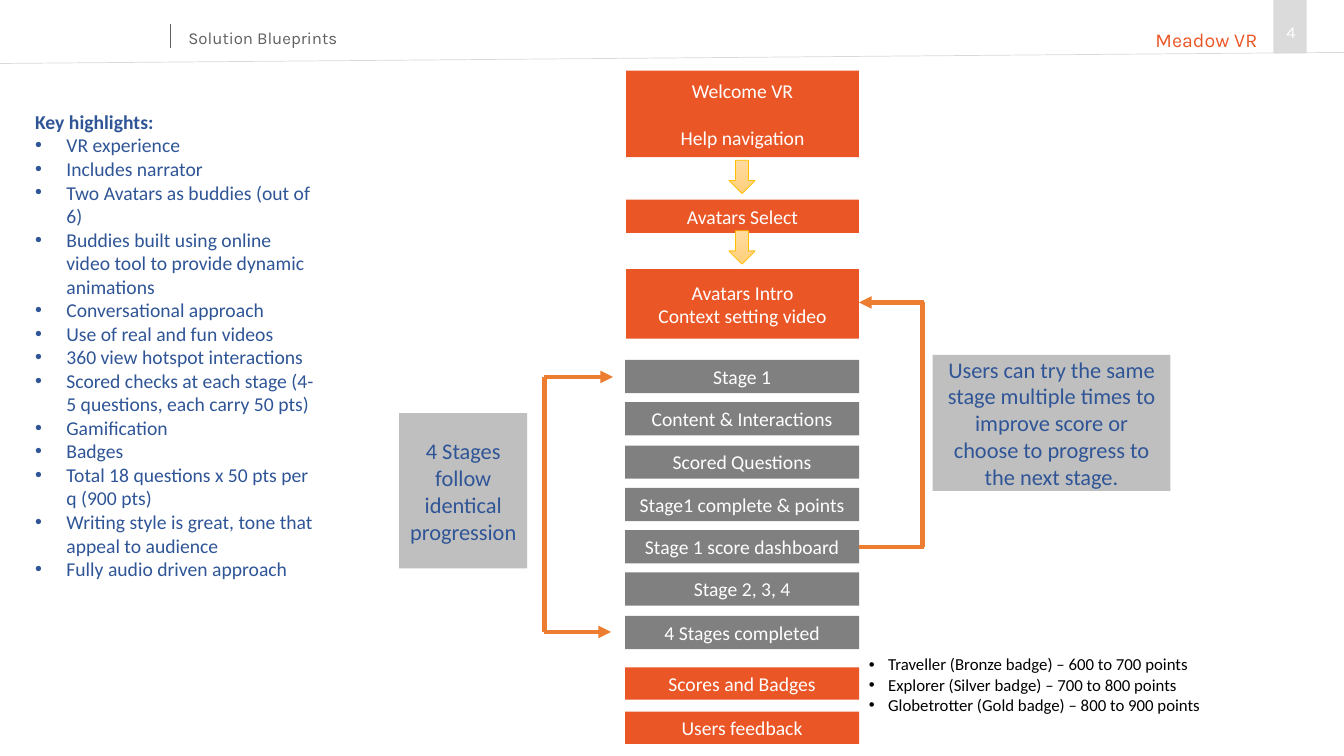
from typing import NamedTuple, Optional

from lxml.etree import SubElement
from pptx import Presentation
from pptx.dml.color import RGBColor
from pptx.enum.shapes import MSO_CONNECTOR as Connector, MSO_SHAPE as Shape
from pptx.enum.text import MSO_ANCHOR as Anchor, PP_ALIGN as Align
from pptx.oxml.ns import qn
from pptx.util import Pt

PX = 9144  # EMU in one px, 100 px to the inch

ORANGE = RGBColor(0xEB, 0x56, 0x26)
LOOP_ORANGE = RGBColor(0xED, 0x7D, 0x31)
STAGE_GREY = RGBColor(0x80, 0x80, 0x80)
NOTE_GREY = RGBColor(0xBF, 0xBF, 0xBF)
TAB_GREY = RGBColor(0xDB, 0xDB, 0xDB)
RULE_GREY = RGBColor(0xD9, 0xD9, 0xD9)
TITLE_GREY = RGBColor(0x60, 0x60, 0x60)
BLUE = RGBColor(0x2F, 0x55, 0x97)
GOLD = RGBColor(0xFF, 0xC0, 0x00)
ARROW_TOP = RGBColor(0xFF, 0xDB, 0x9E)
ARROW_FOOT = RGBColor(0xFF, 0xD0, 0x7C)
WHITE = RGBColor(0xFF, 0xFF, 0xFF)
BLACK = RGBColor(0, 0, 0)


class Area(NamedTuple):
    left: int
    top: int
    width: int
    height: int


class Style(NamedTuple):
    size: int
    color: RGBColor
    font: str = "Calibri"
    align: Align = Align.LEFT


class Box(NamedTuple):
    area: Area
    fill: RGBColor
    style: Style
    lines: tuple[str, ...] = ()
    gap: int = 0


class Line(NamedTuple):
    x1: int
    y1: int
    x2: int
    y2: int
    arrow: bool = False
    color: RGBColor = LOOP_ORANGE
    width: float = 3


STEP = Style(14, WHITE, align=Align.CENTER)
NOTE = Style(16, BLUE, align=Align.CENTER)

# Flow of steps, from the welcome screen to the feedback
STAGES = ("Stage 1", "Content & Interactions", "Scored Questions",
          "Stage1 complete & points", "Stage 1 score dashboard",
          "Stage 2, 3, 4", "4 Stages completed")
STAGE_TOP, STAGE_PITCH = 357, 42.3

BOXES = [
    Box(Area(1263, 0, 33, 53), TAB_GREY, STEP),
    Box(Area(621, 70, 231, 86), ORANGE, STEP, ("Welcome VR", "Help navigation"), 17),
    Box(Area(621, 198, 231, 33), ORANGE, STEP, ("Avatars Select",)),
    Box(Area(621, 267, 231, 69), ORANGE, STEP, ("Avatars Intro", "Context setting video")),
    *(Box(Area(620, round(STAGE_TOP + i * STAGE_PITCH), 232, 33), STAGE_GREY, STEP, (stage,))
      for i, stage in enumerate(STAGES)),
    Box(Area(620, 662, 232, 32), ORANGE, STEP, ("Scores and Badges",)),
    Box(Area(620, 706, 232, 32), ORANGE, STEP, ("Users feedback",)),
    Box(Area(396, 410, 127, 154), NOTE_GREY, NOTE,
        ("4 Stages follow identical progression",)),
    Box(Area(925, 352, 236, 135), NOTE_GREY, NOTE,
        ("Users can try the same stage multiple times to improve score "
         "or choose to progress to the next stage.",)),
]

LINES = [
    # Header rules
    Line(1333, 52, 0, 63, color=RULE_GREY, width=0.5),
    Line(169, 24, 169, 48, color=TITLE_GREY, width=0.5),
    # Retry loop from the dashboard to the intro
    Line(915, 300, 915, 543),
    Line(916, 300, 852, 300, arrow=True),
    Line(916, 543, 852, 543),
    # Bracket around the stages
    Line(540, 374, 540, 627),
    Line(540, 374, 608, 374, arrow=True),
    Line(540, 627, 606, 627, arrow=True),
]

HIGHLIGHTS = (
    "VR experience",
    "Includes narrator",
    "Two Avatars as buddies (out of 6)",
    "Buddies built using online video tool to provide dynamic animations",
    "Conversational approach",
    "Use of real and fun videos",
    "360 view hotspot interactions",
    "Scored checks at each stage (4-5 questions, each carry 50 pts)",
    "Gamification",
    "Badges",
    "Total 18 questions x 50 pts per q (900 pts)",
    "Writing style is great, tone that appeal to audience",
    "Fully audio driven approach",
)
BADGES = (
    "Traveller (Bronze badge) – 600 to 700 points",
    "Explorer (Silver badge) – 700 to 800 points",
    "Globetrotter (Gold badge) – 800 to 900 points",
)


def emu(area: Area) -> list[int]:
    return [length * PX for length in area]


def write(frame, lines: tuple[str, ...], style: Style, gap: int = 0,
          hang: int = 0, heading: Optional[str] = None) -> None:
    """Fill a text frame; hang is the bullet indent in px, 0 for no bullets."""
    frame.word_wrap = True
    texts = lines if heading is None else (heading, *lines)
    for i, text in enumerate(texts):
        is_heading = heading is not None and i == 0
        paragraph = frame.paragraphs[0] if i == 0 else frame.add_paragraph()
        paragraph.text = text
        paragraph.alignment = style.align
        if gap and i:
            paragraph.space_before = Pt(gap)
        if hang and not is_heading:
            props = paragraph._p.get_or_add_pPr()
            props.set("marL", str(hang * PX))
            props.set("indent", str(-hang * PX))
            SubElement(props, qn("a:buFont")).set("typeface", "Arial")
            SubElement(props, qn("a:buChar")).set("char", "•")
        font = paragraph.font
        font.name, font.size, font.bold = style.font, Pt(style.size), is_heading
        font.color.rgb = style.color


def add_box(shapes, box: Box) -> None:
    rect = shapes.add_shape(Shape.RECTANGLE, *emu(box.area))
    rect.shadow.inherit = False
    rect.fill.solid()
    rect.fill.fore_color.rgb = box.fill
    rect.line.fill.background()
    if box.lines:
        rect.text_frame.vertical_anchor = Anchor.MIDDLE
        write(rect.text_frame, box.lines, box.style, box.gap)


def add_line(shapes, line: Line) -> None:
    ends = (length * PX for length in (line.x1, line.y1, line.x2, line.y2))
    connector = shapes.add_connector(Connector.STRAIGHT, *ends)
    connector.line.color.rgb = line.color
    connector.line.width = Pt(line.width)
    props = connector._element.spPr
    if line.arrow:
        SubElement(props.find(qn("a:ln")), qn("a:tailEnd")).set("type", "triangle")
    SubElement(props, qn("a:effectLst"))


def add_down_arrow(shapes, area: Area) -> None:
    arrow = shapes.add_shape(Shape.DOWN_ARROW, *emu(area))
    arrow.shadow.inherit = False
    arrow.fill.gradient()
    arrow.fill.gradient_angle = 270
    for stop, color in zip(arrow.fill.gradient_stops, (ARROW_TOP, ARROW_FOOT)):
        stop.color.rgb = color
    arrow.line.color.rgb = GOLD
    arrow.line.width = Pt(0.5)


def add_text(shapes, area: Area, lines: tuple[str, ...], style: Style,
             anchor: Anchor = Anchor.TOP, hang: int = 0,
             heading: Optional[str] = None) -> None:
    frame = shapes.add_textbox(*emu(area)).text_frame
    frame.vertical_anchor = anchor
    write(frame, lines, style, hang=hang, heading=heading)


def main() -> None:
    deck = Presentation()
    deck.slide_width, deck.slide_height = 1333 * PX, 750 * PX
    shapes = deck.slides.add_slide(deck.slide_layouts[6]).shapes

    # Flow, notes and connecting lines
    for box in BOXES:
        add_box(shapes, box)
    for top in (159, 229):
        add_down_arrow(shapes, Area(723, top, 26, 33))
    for line in LINES:
        add_line(shapes, line)

    # Header texts
    add_text(shapes, Area(177, 23, 373, 30), ("Solution Blueprints",),
             Style(12, TITLE_GREY, "Karla"))
    add_text(shapes, Area(884, 23, 373, 34), ("Meadow VR",),
             Style(14, ORANGE, "Karla", Align.RIGHT))
    add_text(shapes, Area(1266, 12, 37, 40), ("4",), Style(12, WHITE, "Karla"), Anchor.MIDDLE)

    # Bulleted lists
    add_text(shapes, Area(25, 104, 298, 481), HIGHLIGHTS, Style(14, BLUE),
             hang=31, heading="Key highlights:")
    add_text(shapes, Area(852, 644, 429, 71), BADGES, Style(12, BLACK), hang=19)

    deck.save("out.pptx")


if __name__ == "__main__":
    main()
